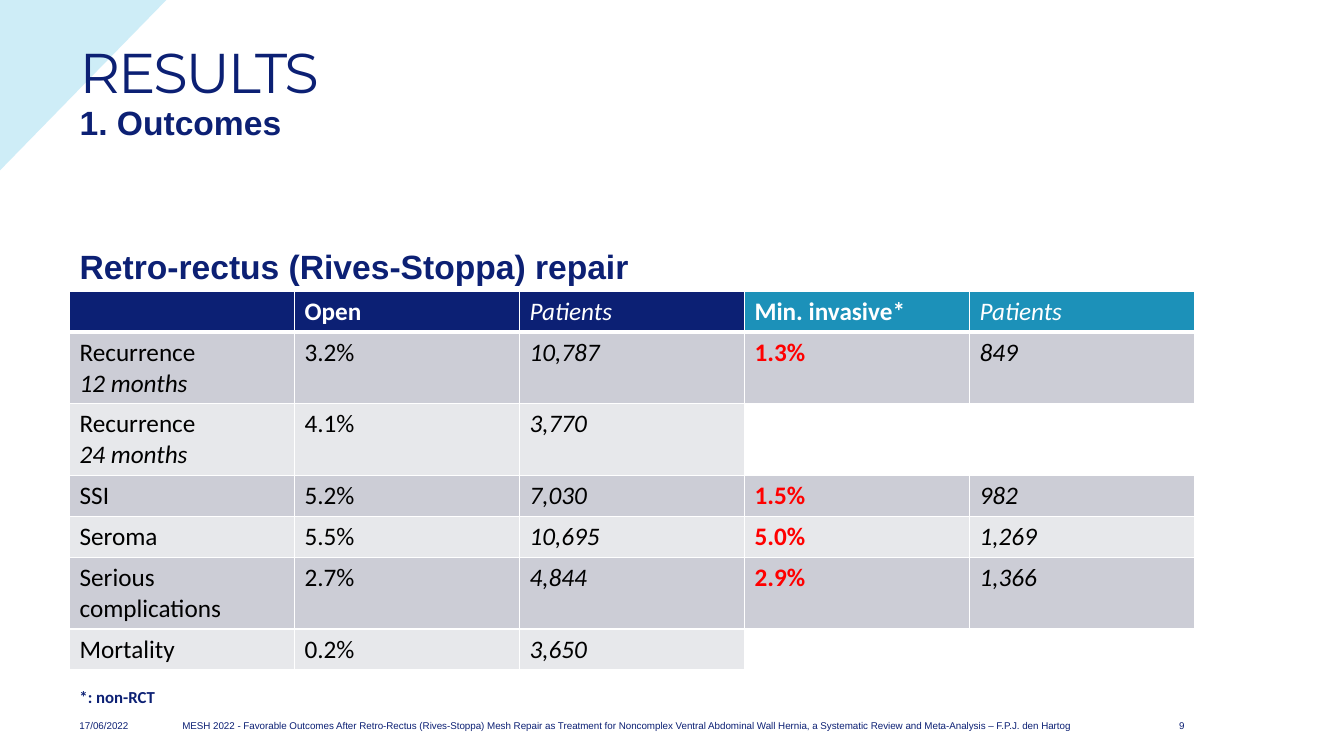
from dataclasses import dataclass

import pptx
import pptx.dml.color
import pptx.enum.shapes
import pptx.enum.text
import pptx.oxml
import pptx.util
from lxml import etree
from pptx.oxml.ns import qn

Pt = pptx.util.Pt
ANCHOR = pptx.enum.text.MSO_ANCHOR
ALIGN = pptx.enum.text.PP_ALIGN

NAVY, TEAL, WHITE, BLACK, RED = "0C2074", "1C91B9", "FFFFFF", "000000", "FF0000"
BANDS = ("CCCDD6", "E7E8EB")
LEFT, WIDTH = 49.68, 803.52
FOOTER_TOP = 510.5


@dataclass
class Label:
    text: str
    left: float
    top: float
    width: float
    height: float
    size: float
    font: str = "Arial"
    bold: bool = False
    align: ALIGN = ALIGN.LEFT
    anchor: ANCHOR = ANCHOR.TOP
    line_spacing: float = 1.0
    wrap: bool = True


@dataclass
class Outcome:
    name: str
    open_rate: str
    open_patients: str
    invasive_rate: str = ""
    invasive_patients: str = ""

    def texts(self) -> list[str]:
        return [self.name, self.open_rate, self.open_patients,
                self.invasive_rate, self.invasive_patients]


TITLE = Label("RESULTS", LEFT, 28.8, WIDTH, 51.1, 40, "Montserrat", line_spacing=0.9)
SUBTITLE = Label("1. Outcomes", LEFT, 72.7, WIDTH, 44.6, 24, bold=True, line_spacing=0.9)
TABLE_HEADING = Label("Retro-rectus (Rives-Stoppa) repair", LEFT, 143.3, WIDTH, 64.8, 24,
                      bold=True, anchor=ANCHOR.BOTTOM, line_spacing=0.9)
NOTES = [
    Label("17/06/2022", LEFT, FOOTER_TOP, 65.5, 15.8, 7),
    Label("MESH 2022 - Favorable Outcomes After Retro-Rectus (Rives-Stoppa) Mesh Repair as "
          "Treatment for Noncomplex Ventral Abdominal Wall Hernia, a Systematic Review and "
          "Meta-Analysis – F.P.J. den Hartog", 123.1, FOOTER_TOP, 684.7, 15.8, 7),
    Label("9", 815, FOOTER_TOP, 38.2, 15.8, 7, align=ALIGN.RIGHT),
    Label("*: non-RCT", LEFT, 486.7, 69.1, 21.6, 12, "Calibri", bold=True, wrap=False),
]
HEADER = Outcome("", "Open", "Patients", "Min. invasive*", "Patients")
OUTCOMES = [
    Outcome("Recurrence\n12 months", "3.2%", "10,787", "1.3%", "849"),
    Outcome("Recurrence\n24 months", "4.1%", "3,770"),
    Outcome("SSI", "5.2%", "7,030", "1.5%", "982"),
    Outcome("Seroma", "5.5%", "10,695", "5.0%", "1,269"),
    Outcome("Serious complications", "2.7%", "4,844", "2.9%", "1,366"),
    Outcome("Mortality", "0.2%", "3,650"),
]
ROW_HEIGHT, TALL_ROW_HEIGHT = 29.2, 51.2


def rgb(value: str) -> pptx.dml.color.RGBColor:
    return pptx.dml.color.RGBColor.from_string(value)


def set_font(font, name: str, size: float, color: str, bold=False, italic=False) -> None:
    font.name, font.size, font.bold, font.italic = name, Pt(size), bold, italic
    font.color.rgb = rgb(color)


def write_label(box, label: Label) -> None:
    box.left, box.top = Pt(label.left), Pt(label.top)
    box.width, box.height = Pt(label.width), Pt(label.height)
    frame = box.text_frame
    frame.text = label.text
    frame.word_wrap = label.wrap
    frame.auto_size = pptx.enum.text.MSO_AUTO_SIZE.NONE
    frame.vertical_anchor = label.anchor
    para = frame.paragraphs[0]
    para.alignment = label.align
    para.line_spacing = label.line_spacing
    para.space_before = Pt(0)
    set_font(para.font, label.font, label.size, NAVY, label.bold)


def set_borders(cell, top: float, bottom: float) -> None:
    widths = {"lnL": 1, "lnR": 1, "lnT": top, "lnB": bottom}
    properties = cell._tc.get_or_add_tcPr()
    for position, (side, width) in enumerate(widths.items()):
        line = etree.Element(qn(f"a:{side}"), w=str(Pt(width)))
        fill = etree.SubElement(line, qn("a:solidFill"))
        etree.SubElement(fill, qn("a:srgbClr"), val=WHITE)
        properties.insert(position, line)


def write_cell(cell, text: str, row: int, column: int) -> None:
    is_header = row == 0
    if is_header:
        fill = NAVY if column < 3 else TEAL
    else:
        fill = BANDS[(row - 1) % 2]
    if text or is_header:
        cell.fill.solid()
        cell.fill.fore_color.rgb = rgb(fill)
    else:
        cell.fill.background()
    set_borders(cell, top=3 if row == 1 else 1, bottom=3 if is_header else 1)

    cell.text = text
    is_patients = column in (2, 4)
    is_invasive_rate = column == 3
    color = WHITE if is_header else RED if is_invasive_rate else BLACK
    bold = is_invasive_rate or (is_header and not is_patients)
    for line, para in enumerate(cell.text_frame.paragraphs):
        set_font(para.font, "Calibri", 18, color, bold, is_patients or line > 0)


def add_outcome_table(page) -> None:
    rows = [HEADER, *OUTCOMES]
    columns = len(HEADER.texts())
    table = page.shapes.add_table(len(rows), columns, Pt(LEFT), Pt(208.1), Pt(WIDTH),
                                  Pt(ROW_HEIGHT * len(rows))).table
    table.first_row = table.horz_banding = False
    for row, outcome in enumerate(rows):
        is_tall = "\n" in outcome.name or " " in outcome.name
        table.rows[row].height = Pt(TALL_ROW_HEIGHT if is_tall else ROW_HEIGHT)
        for column, text in enumerate(outcome.texts()):
            write_cell(table.cell(row, column), text, row, column)


def add_corner(page) -> None:
    corner = page.shapes.add_shape(pptx.enum.shapes.MSO_SHAPE.RIGHT_TRIANGLE,
                                   Pt(-1.44), Pt(0), Pt(123.1), Pt(120.2))
    corner.rotation = 90
    corner.shadow.inherit = False
    corner.line.fill.background()
    corner.fill.solid()
    corner.fill.fore_color.rgb = rgb("86D2ED")
    color = corner._element.spPr.find(f".//{qn('a:srgbClr')}")
    etree.SubElement(color, qn("a:alpha"), val="40000")
    # Behind the placeholders
    page.shapes._spTree.insert(2, corner._element)


def main() -> None:
    deck = pptx.Presentation()
    deck.slide_width, deck.slide_height = Pt(960), Pt(540)
    page = deck.slides.add_slide(deck.slide_layouts.get_by_name("Comparison"))
    add_corner(page)

    # Headings
    holders = {holder.placeholder_format.idx: holder for holder in page.placeholders}
    for index, label in ((0, TITLE), (1, SUBTITLE), (3, TABLE_HEADING)):
        write_label(holders[index], label)
    for index in (2, 4):
        element = holders[index]._element
        element.getparent().remove(element)
    title_run = holders[0].text_frame.paragraphs[0].runs[0]
    title_run._r.get_or_add_rPr().set("spc", "-150")

    # Outcomes
    add_outcome_table(page)

    # Footnote and footer
    for label in NOTES:
        write_label(page.shapes.add_textbox(0, 0, 0, 0), label)

    deck.save("out.pptx")


if __name__ == "__main__":
    main()
